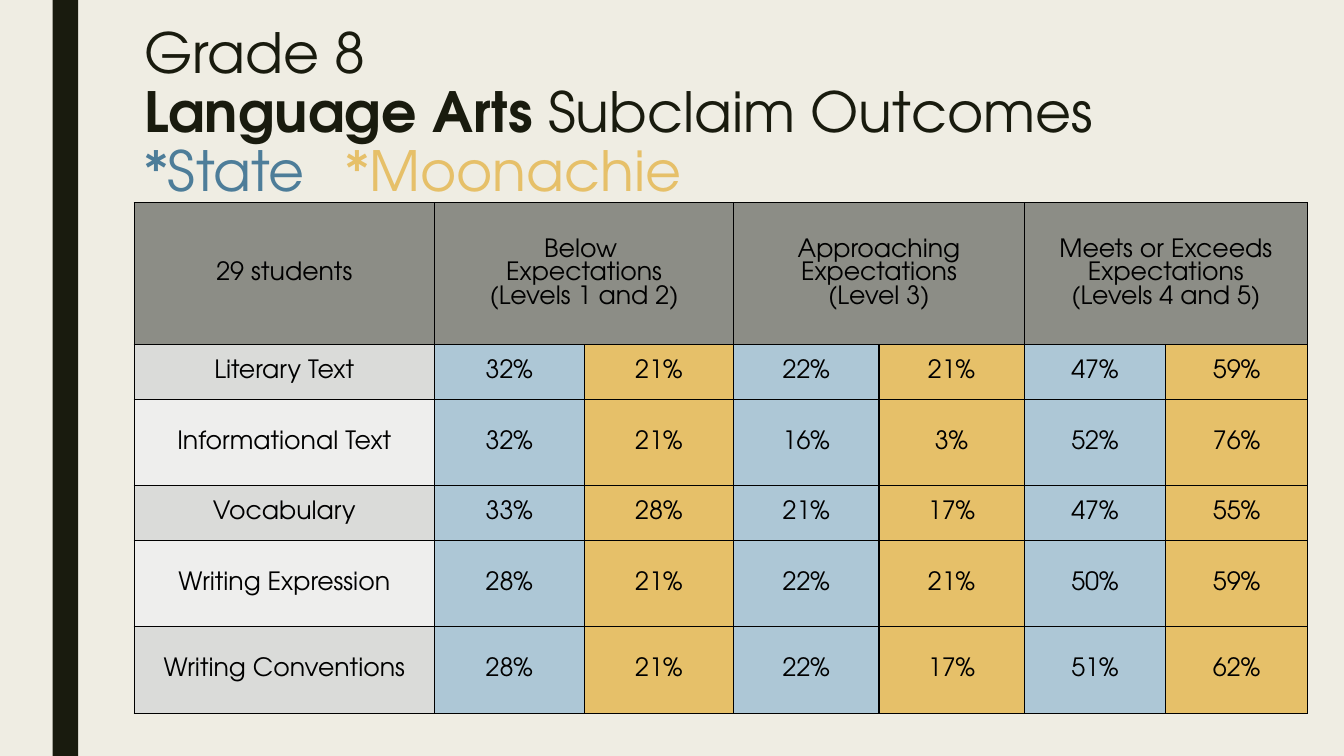
"""Build the Grade 8 language arts subclaim outcomes slide."""
from lxml.etree import SubElement
from pptx import Presentation
from pptx.dml.color import RGBColor
from pptx.enum.shapes import MSO_SHAPE
from pptx.enum.text import MSO_ANCHOR, PP_ALIGN
from pptx.oxml.ns import qn
from pptx.util import Cm, Pt

FONT = "TeX Gyre Adventor"
CREAM = RGBColor(0xEF, 0xED, 0xE3)
INK = RGBColor(0x19, 0x1B, 0x0E)
BLACK = RGBColor(0, 0, 0)
BLUE = RGBColor(0x4D, 0x7D, 0x99)
LIGHT_BLUE = RGBColor(0xAD, 0xC7, 0xD6)
GOLD = RGBColor(0xE6, 0xC0, 0x69)
HEADER = RGBColor(0x8C, 0x8D, 0x86)
BANDS = (RGBColor(0xDA, 0xDB, 0xD9), RGBColor(0xEE, 0xEE, 0xED))

TITLE = [
    [("Grade 8 ", INK, False)],
    [("Language Arts ", INK, True), ("Subclaim Outcomes", INK, False)],
    [("*State \t", BLUE, False), ("*Moonachie", GOLD, False)],
]
HEADINGS = [
    ["29 students"],
    ["Below ", "Expectations", "(Levels 1 and 2)"],
    ["Approaching", "Expectations", "(Level 3)"],
    ["Meets or Exceeds", "Expectations", "(Levels 4 and 5)"],
]
OUTCOMES = [
    ("Literary Text", 32, 21, 22, 21, 47, 59),
    ("Informational Text", 32, 21, 16, 3, 52, 76),
    ("Vocabulary", 33, 28, 21, 17, 47, 55),
    ("Writing Expression", 28, 21, 22, 21, 50, 59),
    ("Writing Conventions", 28, 21, 22, 17, 51, 62),
]
COL_WIDTHS = (7.57, 3.77, 3.77, 3.66, 3.66, 3.57, 3.57)
ROW_HEIGHTS = (3.58, 1.37, 2.18, 1.37, 2.18, 2.18)


def add_run(p, text, size=18, color=BLACK, bold=False):
    r = p.add_run()
    r.text = text
    r.font.name, r.font.size, r.font.bold = FONT, Pt(size), bold
    r.font.color.rgb = color


def add_borders(cell):
    tc_pr = cell._tc.get_or_add_tcPr()
    for side in ("a:lnL", "a:lnR", "a:lnT", "a:lnB"):
        ln = SubElement(tc_pr, qn(side), w=str(Pt(1)))
        fill = SubElement(ln, qn("a:solidFill"))
        SubElement(fill, qn("a:srgbClr"), val=str(BLACK))


def fill_cell(cell, lines, color):
    add_borders(cell)
    cell.fill.solid()
    cell.fill.fore_color.rgb = color
    cell.vertical_anchor = MSO_ANCHOR.MIDDLE
    cell.margin_left = cell.margin_right = Cm(0.36)
    cell.margin_top = cell.margin_bottom = Cm(0.13)
    tf = cell.text_frame
    for i, line in enumerate(lines):
        p = tf.add_paragraph() if i else tf.paragraphs[0]
        p.alignment = PP_ALIGN.CENTER
        add_run(p, line)


def add_title(s):
    tf = s.shapes.add_textbox(Cm(3.38), Cm(0.53), Cm(26.67), Cm(4.11)).text_frame
    tf.word_wrap = True
    tf.vertical_anchor = MSO_ANCHOR.TOP
    p = tf.paragraphs[0]
    p.line_spacing = 0.89
    for i, line in enumerate(TITLE):
        if i:
            p.add_line_break()
        for text, color, bold in line:
            add_run(p, text, size=39.6, color=color, bold=bold)


def add_outcomes(s):
    table = s.shapes.add_table(
        len(ROW_HEIGHTS), len(COL_WIDTHS), Cm(3.38), Cm(5.11),
        Cm(sum(COL_WIDTHS)), Cm(sum(ROW_HEIGHTS))).table
    for col, width in zip(table.columns, COL_WIDTHS):
        col.width = Cm(width)
    for row, height in zip(table.rows, ROW_HEIGHTS):
        row.height = Cm(height)
    for i, lines in enumerate(HEADINGS):
        left = max(0, 2 * i - 1)
        fill_cell(table.cell(0, left), lines, HEADER)
        if i:
            fill_cell(table.cell(0, left + 1), [], HEADER)
            table.cell(0, left).merge(table.cell(0, left + 1))
    for i, (subclaim, *shares) in enumerate(OUTCOMES):
        fill_cell(table.cell(i + 1, 0), [subclaim], BANDS[i % 2])
        for j, share in enumerate(shares):
            fill_cell(table.cell(i + 1, j + 1), [f"{share}%"], (LIGHT_BLUE, GOLD)[j % 2])


def main():
    prs = Presentation()
    prs.slide_width, prs.slide_height = Cm(33.87), Cm(19.05)
    s = prs.slides.add_slide(prs.slide_layouts[6])
    s.background.fill.solid()
    s.background.fill.fore_color.rgb = CREAM
    bar = s.shapes.add_shape(MSO_SHAPE.RECTANGLE, Cm(1.33), 0, Cm(0.64), prs.slide_height)
    bar.shadow.inherit = False
    bar.fill.solid()
    bar.fill.fore_color.rgb = INK
    bar.line.fill.background()
    add_title(s)
    add_outcomes(s)
    prs.save("out.pptx")


if __name__ == "__main__":
    main()
